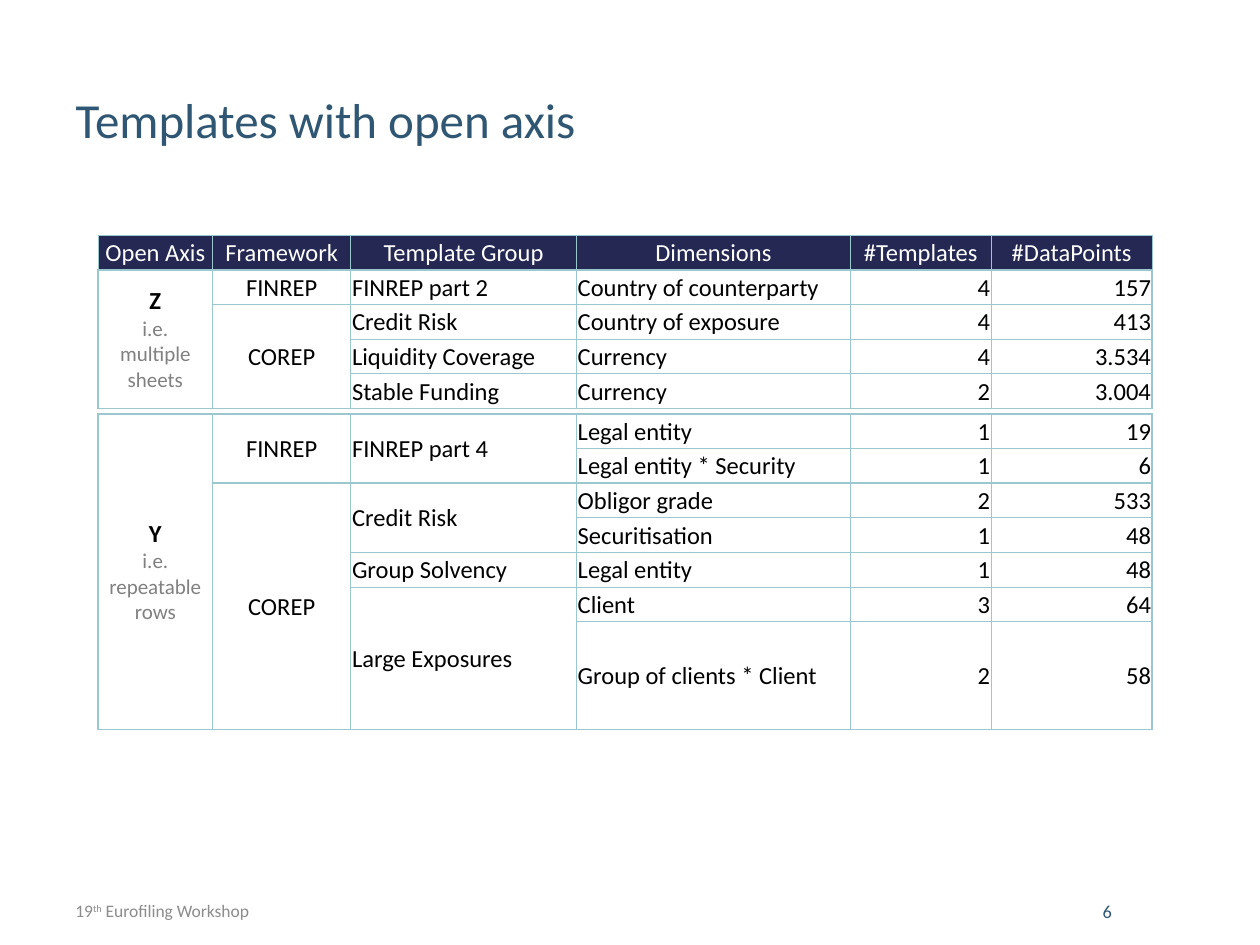
from pptx import Presentation
from pptx.dml.color import RGBColor
from pptx.enum.text import MSO_ANCHOR, PP_ALIGN
from pptx.oxml import parse_xml
from pptx.oxml.ns import nsdecls
from pptx.util import Pt

WHITE = RGBColor(0xFF, 0xFF, 0xFF)
BLACK = RGBColor(0, 0, 0)
NAVY = RGBColor(0x24, 0x28, 0x52)
BLUE = RGBColor(0x2F, 0x57, 0x73)
GREY = RGBColor(0x80, 0x80, 0x80)
FOOTER_GREY = RGBColor(0x8C, 0x8C, 0x8C)
TEAL = RGBColor(0x9B, 0xC7, 0xCE)
FONT = "Calibri"

COL_WIDTHS = [65.5, 79, 129, 156.5, 80.5, 92]
ROW_HEIGHT = 19.8
ALIGNS = [PP_ALIGN.CENTER] * 2 + [PP_ALIGN.LEFT] * 2 + [PP_ALIGN.RIGHT] * 2
HEADER = ["Open Axis", "Framework", "Template Group",
          "Dimensions", "#Templates", "#DataPoints"]
SHEET_ROWS = [
    ["Z\ni.e.\nmultiple sheets", "FINREP", "FINREP part 2", "Country of counterparty", "4", "157"],
    [None, "COREP", "Credit Risk", "Country of exposure", "4", "413"],
    [None, None, "Liquidity Coverage", "Currency", "4", "3.534"],
    [None, None, "Stable Funding", "Currency", "2", "3.004"],
]
REPEATABLE_ROWS = [
    ["Y\ni.e. repeatable rows", "FINREP", "FINREP part 4", "Legal entity", "1", "19"],
    [None, None, None, "Legal entity * Security", "1", "6"],
    [None, "COREP", "Credit Risk", "Obligor grade", "2", "533"],
    [None, None, None, "Securitisation", "1", "48"],
    [None, None, "Group Solvency", "Legal entity", "1", "48"],
    [None, None, "Large Exposures", "Client", "3", "64"],
    [None, None, None, "Group of clients * Client", "2", "58"],
]


def style(p, size, color, align, bold=False):
    """Format a whole paragraph."""
    p.alignment = align
    p.font.name, p.font.size = FONT, Pt(size)
    p.font.color.rgb, p.font.bold = color, bold


def set_borders(cell, thick):
    """Draw the four cell edges, with those named in thick at 1 pt."""
    tc_pr = cell._tc.get_or_add_tcPr()
    for side in "LRTB":
        width = Pt(1 if side in thick else 0.5)
        tc_pr.append(parse_xml(
            f'<a:ln{side} {nsdecls("a")} w="{width}"><a:solidFill>'
            f'<a:srgbClr val="{TEAL}"/></a:solidFill></a:ln{side}>'))


def fill_cell(cell, text, fill, align, thick, color=BLACK, lead=False):
    """Write and format one cell; lead marks a bold key with a grey note."""
    cell.margin_left = cell.margin_right = cell.margin_top = Pt(0.7)
    cell.margin_bottom = 0
    cell.vertical_anchor = MSO_ANCHOR.MIDDLE
    set_borders(cell, thick)
    cell.fill.solid()
    cell.fill.fore_color.rgb = fill
    cell.text = text
    for i, p in enumerate(cell.text_frame.paragraphs):
        if i:
            style(p, 12, GREY, align)
        else:
            style(p, 14, color, align, lead)


def thick_edges(rows, row, end, col):
    """Name the heavy edges of a cell: outer frame and framework groups."""
    edges = "L" if col <= 1 else ""
    edges += "R" if col in (0, len(COL_WIDTHS) - 1) else ""
    edges += "T" if rows[row][1] else ""
    edges += "B" if end == len(rows) or rows[end][1] else ""
    return edges


def add_axis_table(slide, left, top, rows, header=None):
    """Add one table, merging each value with the empty cells below it."""
    offset = 1 if header else 0
    count = len(rows) + offset
    frame = slide.shapes.add_table(count, len(COL_WIDTHS), Pt(left), Pt(top),
                                   Pt(sum(COL_WIDTHS)), Pt(count * ROW_HEIGHT))
    table = frame.table
    table.first_row = table.horz_banding = False
    for column, width in zip(table.columns, COL_WIDTHS):
        column.width = Pt(width)
    for row in table.rows:
        row.height = Pt(ROW_HEIGHT)
    for c, text in enumerate(header or []):
        fill_cell(table.cell(0, c), text, NAVY, PP_ALIGN.CENTER, "B", WHITE)
    for r, values in enumerate(rows):
        for c, text in enumerate(values):
            if text is None:
                continue
            end = r + 1
            while end < len(rows) and rows[end][c] is None:
                end += 1
            cell = table.cell(r + offset, c)
            if end > r + 1:
                cell.merge(table.cell(end - 1 + offset, c))
            fill_cell(cell, text, WHITE, ALIGNS[c],
                      thick_edges(rows, r, end, c), lead=c == 0)


def add_title(slide, left, top, width, height):
    """Place and format the title placeholder."""
    sp = slide.shapes.title
    sp.left, sp.top, sp.width, sp.height = Pt(left), Pt(top), Pt(width), Pt(height)
    tf = sp.text_frame
    tf.text = "Templates with open axis"
    tf.vertical_anchor = MSO_ANCHOR.MIDDLE
    style(tf.paragraphs[0], 28, BLUE, PP_ALIGN.JUSTIFY)


def add_label(slide, left, top, width, height, parts, size, color):
    """Add a one-line text box; parts are (text, superscript) pairs."""
    sp = slide.shapes.add_textbox(Pt(left), Pt(top), Pt(width), Pt(height))
    tf = sp.text_frame
    tf.word_wrap = True
    tf.vertical_anchor = MSO_ANCHOR.MIDDLE
    p = tf.paragraphs[0]
    style(p, size, color, PP_ALIGN.JUSTIFY)
    for text, superscript in parts:
        r = p.add_run()
        r.text = text
        if superscript:
            r._r.get_or_add_rPr().set("baseline", "30000")


def add_footer(slide, left, top, width, height):
    """Add the event name at the left and the page number at the right."""
    event = [("19", False), ("th", True), (" Eurofiling Workshop", False)]
    number_width = 61
    add_label(slide, left, top, 387, height, event, 10, FOOTER_GREY)
    add_label(slide, left + width - number_width, top, number_width, height,
              [("6", False)], 10.5, BLUE)


def main():
    """Build the slide and save it."""
    prs = Presentation()
    prs.slide_width, prs.slide_height = Pt(720), Pt(540)
    slide = prs.slides.add_slide(prs.slide_layouts[5])
    add_title(slide, 36, 46, 525, 44)
    add_axis_table(slide, 56, 134.5, SHEET_ROWS, HEADER)
    add_axis_table(slide, 56, 236.5, REPEATABLE_ROWS)
    add_footer(slide, 36, 512, 648, 17)
    prs.save("out.pptx")


if __name__ == "__main__":
    main()
